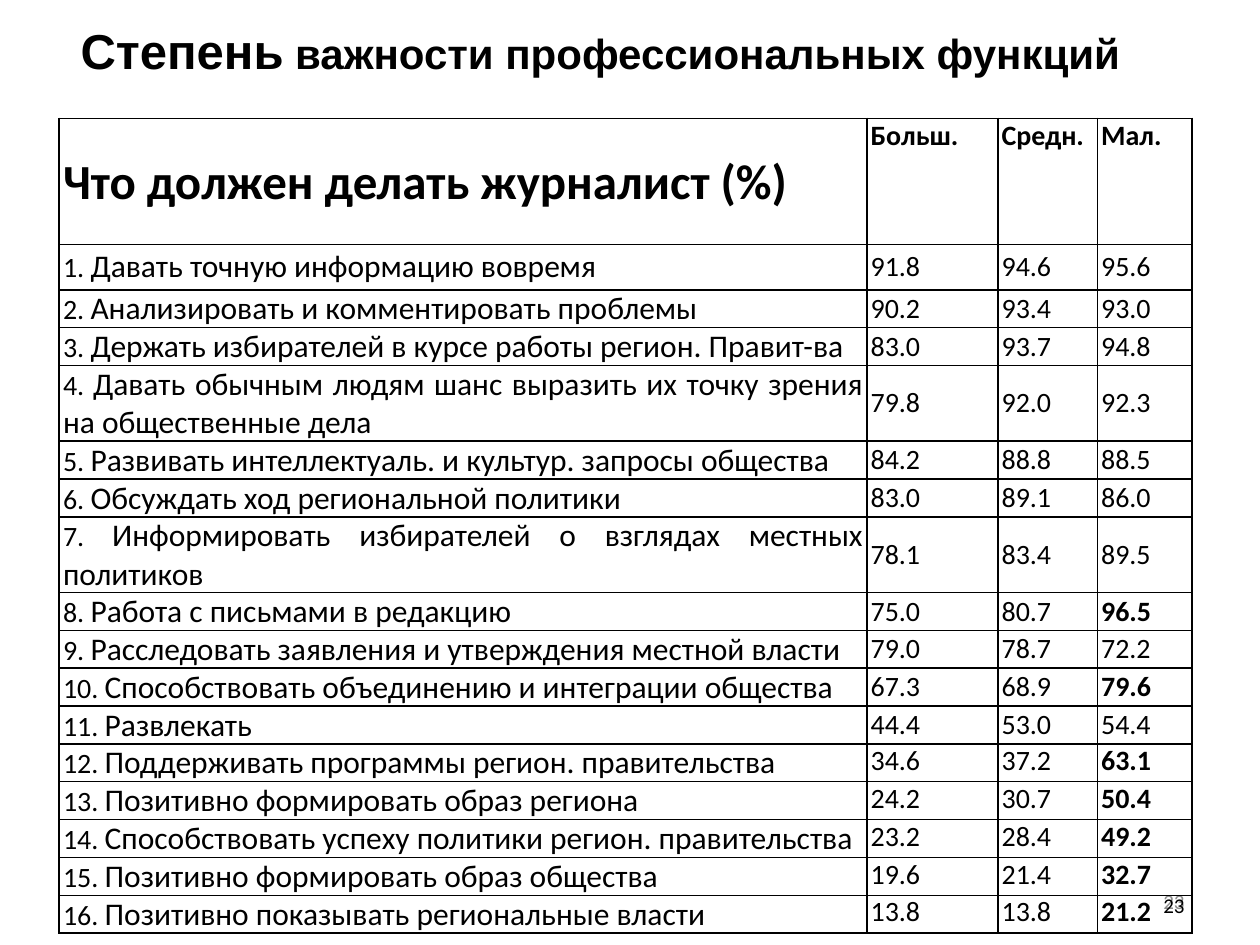
from lxml.etree import SubElement
from pptx import Presentation
from pptx.dml.color import RGBColor
from pptx.enum.text import MSO_ANCHOR as ANCHOR, PP_ALIGN as ALIGN
from pptx.oxml.ns import qn
from pptx.util import Inches, Pt

COLORS = {"ink": "000000", "grey": "8C8C8C"}
COL_WIDTHS = [6.41, 1.04, 0.79, 0.75]
HEADERS = ["Что должен делать журналист (%)", "Больш.", "Средн.", "Мал."]
FUNCTIONS = [
    ("Давать точную информацию вовремя", "91.8", "94.6", "95.6"),
    ("Анализировать и комментировать проблемы", "90.2", "93.4", "93.0"),
    ("Держать избирателей в курсе работы регион. Правит-ва", "83.0", "93.7", "94.8"),
    ("Давать обычным людям шанс выразить их точку зрения на общественные дела",
     "79.8", "92.0", "92.3"),
    ("Развивать интеллектуаль. и культур. запросы общества", "84.2", "88.8", "88.5"),
    ("Обсуждать ход региональной политики", "83.0", "89.1", "86.0"),
    ("Информировать избирателей о взглядах местных политиков", "78.1", "83.4", "89.5"),
    ("Работа с письмами в редакцию", "75.0", "80.7", "96.5"),
    ("Расследовать заявления и утверждения местной власти", "79.0", "78.7", "72.2"),
    ("Способствовать объединению и интеграции общества", "67.3", "68.9", "79.6"),
    ("Развлекать", "44.4", "53.0", "54.4"),
    ("Поддерживать программы регион. правительства", "34.6", "37.2", "63.1"),
    ("Позитивно формировать образ региона", "24.2", "30.7", "50.4"),
    ("Способствовать успеху политики регион. правительства", "23.2", "28.4", "49.2"),
    ("Позитивно формировать образ общества", "19.6", "21.4", "32.7"),
    ("Позитивно показывать региональные власти", "13.8", "13.8", "21.2"),
]
BOLD_ROWS = {8, 10, 12, 13, 14, 15, 16}  # small-town share stands out
TWO_LINE_ROWS = {4, 7}
LAST_MIDDLE_ROW = 11


def write(p, parts, align=ALIGN.JUSTIFY, bold=False, font="Calibri", color="ink"):
    """Fill a paragraph with (text, size) runs."""
    p.alignment = align
    p.font.bold = bold
    p.font.name = font
    p.font.color.rgb = RGBColor.from_string(COLORS[color])
    for text, size in parts:
        r = p.add_run()
        r.text = text
        r.font.size = Pt(size)


def style_cell(cell, anchor):
    """Clear the fill, tighten the margins and draw all four borders."""
    cell.vertical_anchor = anchor
    cell.margin_left = cell.margin_right = Inches(0.03)
    cell.margin_top = cell.margin_bottom = 0
    tcPr = cell._tc.get_or_add_tcPr()
    for side in ("a:lnL", "a:lnR", "a:lnT", "a:lnB"):
        ln = SubElement(tcPr, qn(side), w=str(Pt(1)))
        fill = SubElement(ln, qn("a:solidFill"))
        SubElement(fill, qn("a:srgbClr"), val=COLORS["ink"])
    cell.fill.background()


prs = Presentation()
prs.slide_width, prs.slide_height = Inches(10), Inches(7.5)
s = prs.slides.add_slide(prs.slide_layouts[6])

# Page number, grey with a black one over it
for top, height, anchor, color in [(6.95, 0.4, ANCHOR.MIDDLE, "grey"),
                                   (6.83, 0.5, ANCHOR.BOTTOM, "ink")]:
    sp = s.shapes.add_textbox(Inches(7.17), Inches(top), Inches(2.33), Inches(height))
    tf = sp.text_frame
    tf.word_wrap = True
    tf.vertical_anchor = anchor
    write(tf.paragraphs[0], [("23", 12)], align=ALIGN.RIGHT, color=color)

# Table of functions
row_heights = [1.0, 0.36] + [0.6 if n in TWO_LINE_ROWS else 0.3
                             for n in range(2, len(FUNCTIONS) + 1)]
table = s.shapes.add_table(len(row_heights), len(COL_WIDTHS), Inches(0.47), Inches(0.94),
                           Inches(sum(COL_WIDTHS)), Inches(sum(row_heights))).table
table.first_row = table.horz_banding = False
for column, width in zip(table.columns, COL_WIDTHS):
    column.width = Inches(width)
for row, height in zip(table.rows, row_heights):
    row.height = Inches(height)

for c, text in enumerate(HEADERS):
    cell = table.cell(0, c)
    style_cell(cell, ANCHOR.TOP)
    write(cell.text_frame.paragraphs[0], [(text, 16 if c else 28)], bold=True)
table.cell(0, 0).margin_top = Inches(0.27)

for n, (name, *shares) in enumerate(FUNCTIONS, 1):
    anchor = ANCHOR.MIDDLE if n <= LAST_MIDDLE_ROW else ANCHOR.TOP
    row_parts = [[(f"{n}. ", 16), (name, 18)]] + [[(share, 16)] for share in shares]
    for c, parts in enumerate(row_parts):
        cell = table.cell(n, c)
        style_cell(cell, anchor)
        write(cell.text_frame.paragraphs[0], parts, bold=c == 3 and n in BOLD_ROWS)

# Title
sp = s.shapes.add_textbox(Inches(0.47), Inches(0.08), Inches(8.62), Inches(0.97))
tf = sp.text_frame
tf.word_wrap = True
tf.vertical_anchor = ANCHOR.TOP
tf.margin_left, tf.margin_right, tf.margin_top = Inches(0.17), Inches(0), Inches(0.08)
write(tf.paragraphs[0], [("Степень", 28), (" важности профессиональных функций", 24)],
      bold=True, font="Arial")

prs.save("out.pptx")
